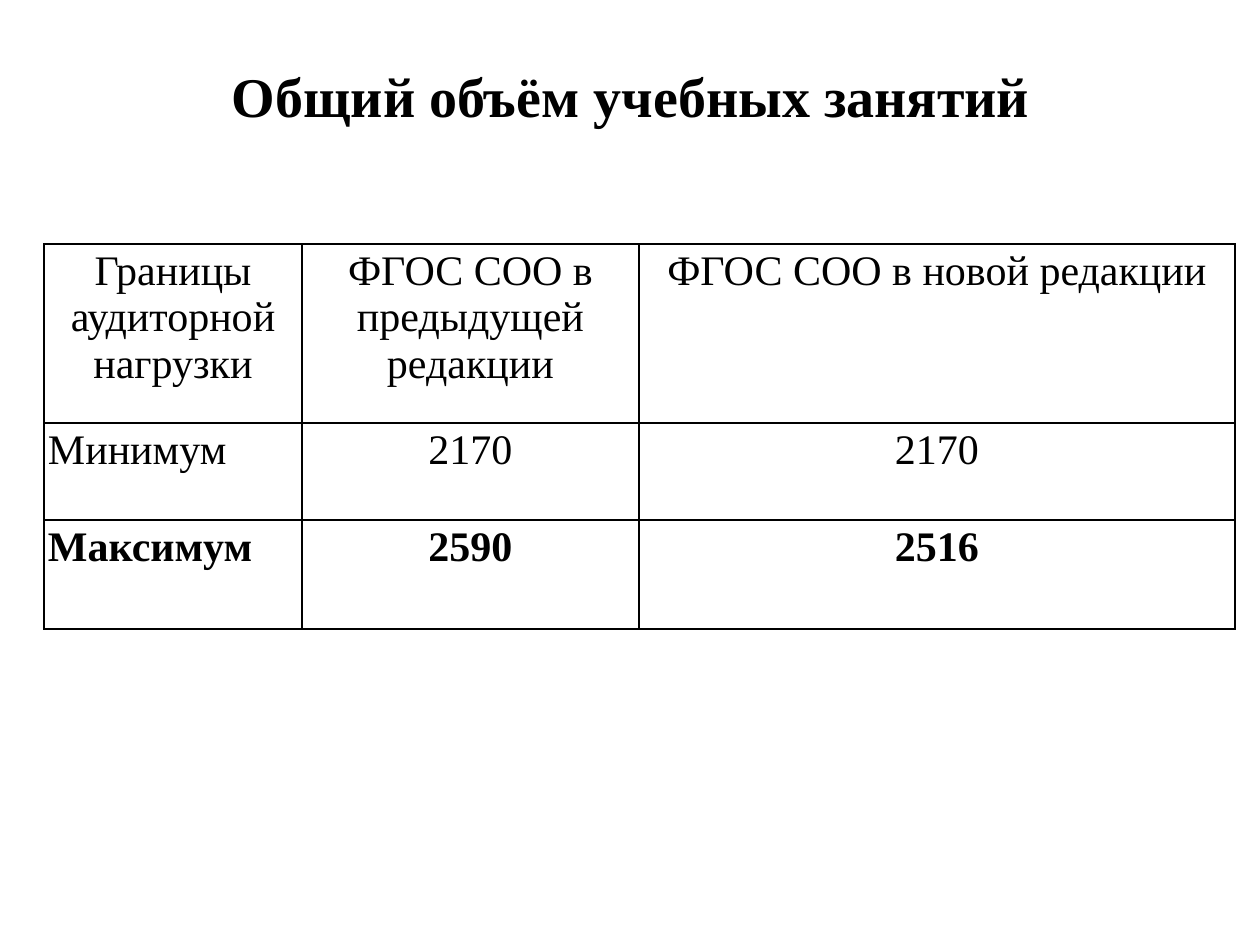
from lxml import etree
from pptx import Presentation
from pptx import util as u
from pptx.dml.color import RGBColor
from pptx.enum import text
from pptx.oxml import ns

PX = 914400 // 126
BLACK = RGBColor(0, 0, 0)
FONT = "Times New Roman"
COLUMNS = [258, 337, 596]
ROWS = [179, 97, 109]
HOURS = [
    ["Границы аудиторной нагрузки", "ФГОС СОО в предыдущей редакции", "ФГОС СОО в новой редакции"],
    ["Минимум", "2170", "2170"],
    ["Максимум", "2590", "2516"],
]


def px(n):
    """Turn pixels into EMU."""
    return u.Emu(n * PX)


def add_text(tf, words, size, bold, align):
    """Write one formatted run into the first paragraph of a frame."""
    p = tf.paragraphs[0]
    p.alignment = align
    r = p.add_run()
    r.text = words
    r.font.name = FONT
    r.font.size = u.Pt(size)
    r.font.bold = bold
    r.font.color.rgb = BLACK


def add_borders(cell):
    """Draw a thin solid line on each side of a cell."""
    tcPr = cell._tc.get_or_add_tcPr()
    for i, side in enumerate(("lnL", "lnR", "lnT", "lnB")):
        ln = etree.Element(ns.qn(f"a:{side}"), w=str(u.Pt(1)))
        fill = etree.SubElement(ln, ns.qn("a:solidFill"))
        etree.SubElement(fill, ns.qn("a:srgbClr"), val=str(BLACK))
        tcPr.insert(i, ln)


def fill_title(s, left, top, width, height):
    """Place the title placeholder in its box."""
    sp = s.shapes.title
    sp.left, sp.top, sp.width, sp.height = map(px, (left, top, width, height))
    tf = sp.text_frame
    tf.word_wrap = True
    tf.vertical_anchor = text.MSO_ANCHOR.MIDDLE
    add_text(tf, "Общий объём учебных занятий", 32, True, text.PP_ALIGN.CENTER)


def add_hours_table(s, left, top):
    """Build the table of study hours from its top left corner."""
    box = map(px, (left, top, sum(COLUMNS), sum(ROWS)))
    table = s.shapes.add_table(len(ROWS), len(COLUMNS), *box).table
    table.first_row = table.horz_banding = False
    for column, width in zip(table.columns, COLUMNS):
        column.width = px(width)
    for i, (row, height) in enumerate(zip(table.rows, ROWS)):
        row.height = px(height)
        for j, cell in enumerate(row.cells):
            cell.fill.background()
            add_borders(cell)
            cell.margin_left = cell.margin_right = px(4)
            cell.margin_top = cell.margin_bottom = px(4)
            is_label = i > 0 and j == 0
            align = text.PP_ALIGN.LEFT if is_label else text.PP_ALIGN.CENTER
            add_text(cell.text_frame, HOURS[i][j], 24, i == len(ROWS) - 1, align)


def main():
    """Build and save the slide."""
    prs = Presentation()
    prs.slide_width, prs.slide_height = u.Inches(10), u.Inches(7.5)
    s = prs.slides.add_slide(prs.slide_layouts[5])
    fill_title(s, 64, 16, 1134, 158)
    add_hours_table(s, 44, 244)
    prs.save("out.pptx")


if __name__ == "__main__":
    main()
